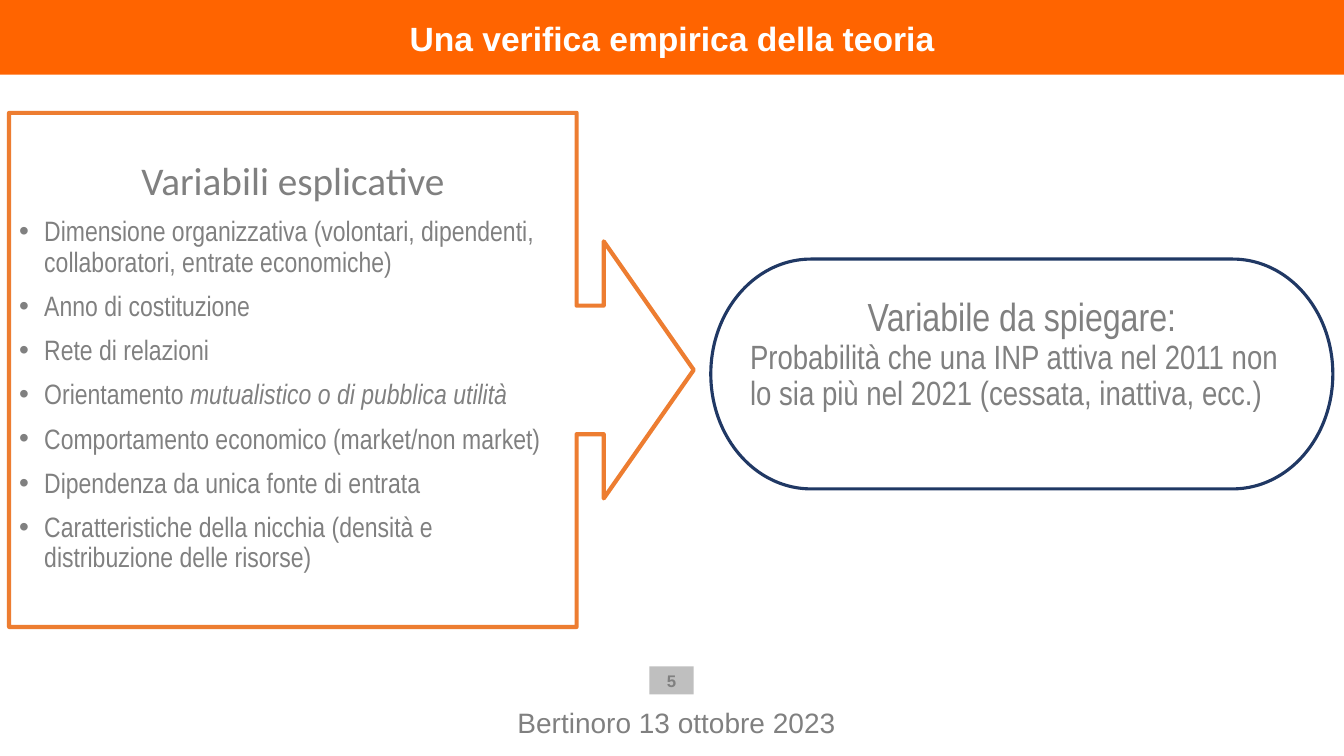
import pptx
import pptx.dml.color
import pptx.enum.shapes
import pptx.enum.text
import pptx.oxml.ns
import pptx.util
from lxml import etree

SHAPE = pptx.enum.shapes.MSO_SHAPE
ALIGN = pptx.enum.text.PP_ALIGN
ANCHOR = pptx.enum.text.MSO_ANCHOR
SCALE = 9144
WIDTH, HEIGHT = 1333, 750
COLORS = {
    "orange": "FF6400",
    "rust": "ED7D31",
    "navy": "203864",
    "gray": "808080",
    "silver": "BFBFBF",
    "white": "FFFFFF",
}
FACTORS = [
    ["Dimensione organizzativa (volontari, dipendenti, collaboratori, entrate economiche)"],
    ["Anno di costituzione"],
    ["Rete di relazioni"],
    ["Orientamento ", "mutualistico o di pubblica utilità"],
    ["Comportamento economico (market/non market)"],
    ["Dipendenza da unica fonte di entrata"],
    ["Caratteristiche della nicchia (densità e distribuzione delle risorse)"],
]


def px(count):
    return pptx.util.Emu(count * SCALE)


def color(name):
    return pptx.dml.color.RGBColor.from_string(COLORS[name])


class Deck:
    def __init__(self):
        self.show = pptx.Presentation()
        self.show.slide_width = px(WIDTH)
        self.show.slide_height = px(HEIGHT)
        self.slide = self.show.slides.add_slide(self.show.slide_layouts[6])

    def frame(self, item, anchor, inset):
        frame = item.text_frame
        frame.word_wrap = True
        frame.vertical_anchor = anchor
        frame.margin_left, frame.margin_top, frame.margin_right, frame.margin_bottom = map(px, inset)

    def shape(self, kind, box, fill, line=None, weight=0, anchor=ANCHOR.TOP, inset=(10, 5, 10, 5)):
        item = self.slide.shapes.add_shape(kind, *map(px, box))
        item.shadow.inherit = False
        item.fill.solid()
        item.fill.fore_color.rgb = color(fill)
        if line:
            item.line.color.rgb = color(line)
            item.line.width = pptx.util.Pt(weight)
        else:
            item.line.fill.background()
        self.frame(item, anchor, inset)
        return item

    def label(self, box, anchor, inset):
        item = self.slide.shapes.add_textbox(*map(px, box))
        self.frame(item, anchor, inset)
        return item

    def text(self, item, parts, size, font, tint="gray", bold=False, align=ALIGN.CENTER, space=None):
        frame = item.text_frame
        para = frame.add_paragraph() if frame.text else frame.paragraphs[0]
        para.alignment = align
        para.line_spacing = space
        for index, part in enumerate(parts):
            run = para.add_run()
            run.text = part
            run.font.size = pptx.util.Pt(size)
            run.font.name = font
            run.font.bold = bold
            run.font.italic = index > 0
            run.font.color.rgb = color(tint)
        return para

    def bullet(self, item, parts, size, font):
        para = self.text(item, parts, size, font, align=ALIGN.LEFT, space=0.9)
        para.space_before = pptx.util.Pt(10)
        props = para._p.get_or_add_pPr()
        props.set("marL", str(px(25)))
        props.set("indent", str(px(-25)))
        etree.SubElement(props, pptx.oxml.ns.qn("a:buFont")).set("typeface", "Arial")
        etree.SubElement(props, pptx.oxml.ns.qn("a:buChar")).set("char", "•")


def main():
    deck = Deck()

    page = deck.shape(SHAPE.RECTANGLE, (644, 661, 44, 28), "silver", anchor=ANCHOR.MIDDLE)
    deck.text(page, ["5"], 12, "Arial", bold=True)

    title = deck.shape(SHAPE.RECTANGLE, (0, 0, WIDTH, 74), "orange",
                       anchor=ANCHOR.BOTTOM, inset=(31, 8, 31, 16))
    deck.text(title, ["Una verifica empirica della teoria"], 24, "Arial", "white", True)

    foot = deck.label((395, 697, 552, 36), ANCHOR.BOTTOM, (10, 5, 10, 0))
    deck.text(foot, ["Bertinoro 13 ottobre 2023"], 20, "Arial")

    cause = deck.shape(SHAPE.RIGHT_ARROW_CALLOUT, (9, 112, 679, 510), "white", "rust", 3,
                       inset=(10, 48, 10, 5))
    for index, value in enumerate((0.25, 0.25, 0.175, 0.829)):
        cause.adjustments[index] = value
    deck.text(cause, ["Variabili esplicative"], 28, "Calibri", space=0.9)
    for parts in FACTORS:
        deck.bullet(cause, parts, 20, "Arial Narrow")

    effect = deck.shape(SHAPE.FLOWCHART_TERMINATOR, (705, 257, 617, 228), "white", "navy", 2.25)
    deck.text(effect, ["Variabile da spiegare:"], 28, "Arial Narrow", space=0.9)
    deck.text(effect, ["Probabilità che una INP attiva nel 2011 non lo sia più nel 2021 (cessata, inattiva, ecc.)"],
              24, "Arial Narrow", align=ALIGN.LEFT, space=0.9)

    deck.show.save("out.pptx")


if __name__ == "__main__":
    main()
